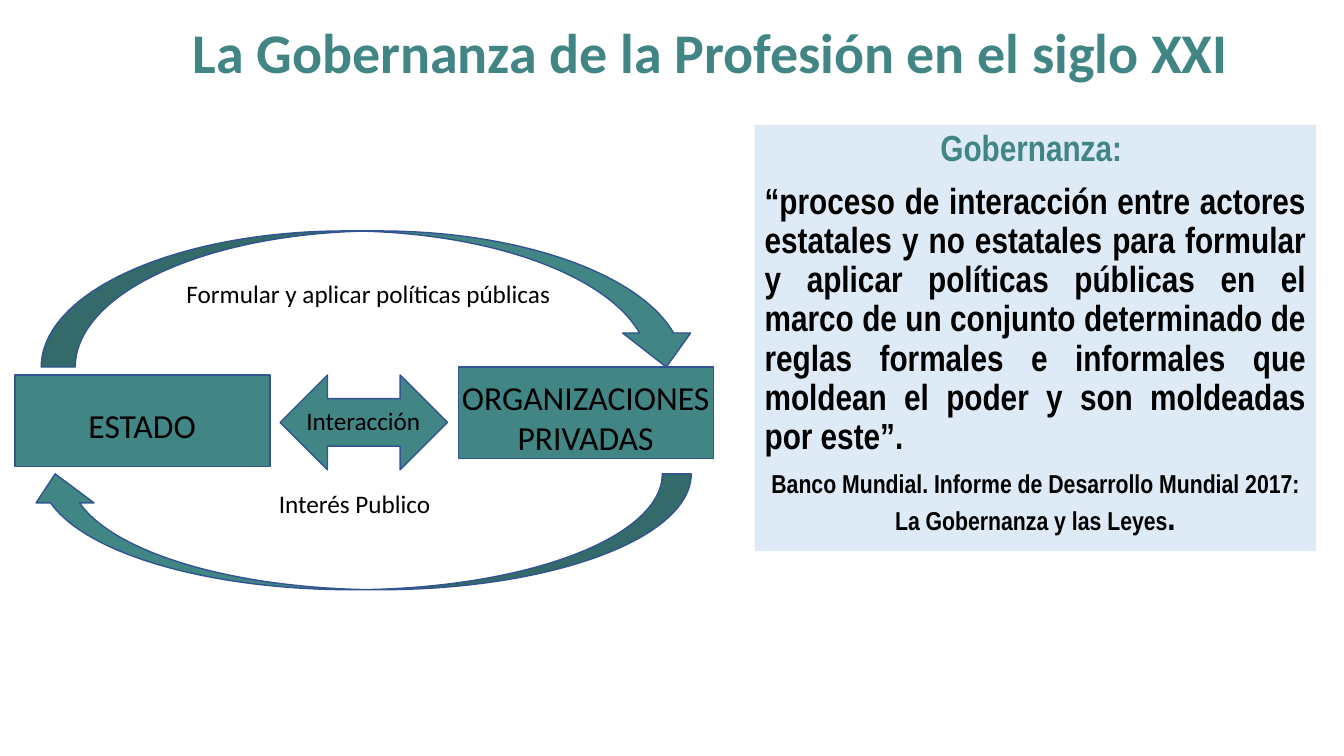
from pptx import Presentation
from pptx.dml.color import RGBColor
from pptx.enum.shapes import MSO_SHAPE as SHAPE
from pptx.enum.text import MSO_ANCHOR as ANCHOR, PP_ALIGN as ALIGN
from pptx.util import Cm, Pt

TEAL = RGBColor(0x41, 0x85, 0x84)
OUTLINE = RGBColor(0x32, 0x54, 0x91)
PALE_BLUE = RGBColor(0xDE, 0xEB, 0xF7)
BLACK = RGBColor(0, 0, 0)


class SlideBuilder:
    font = "Calibri"
    quote_font = "Arial Narrow"

    def __init__(self, slide):
        self.s = slide

    def style(self, p, size, color=BLACK, bold=False, font=None, align=ALIGN.LEFT):
        p.alignment = align
        p.font.name = font or self.font
        p.font.size = Pt(size)
        p.font.bold = bold
        p.font.color.rgb = color

    def shape(self, kind, box, fill=TEAL, line=OUTLINE, rotation=0):
        sp = self.s.shapes.add_shape(kind, *map(Cm, box))
        sp.shadow.inherit = False
        sp.rotation = rotation
        sp.fill.solid()
        sp.fill.fore_color.rgb = fill
        if line is None:
            sp.line.fill.background()
        else:
            sp.line.color.rgb = line
            sp.line.width = Pt(1)
        return sp

    def label(self, text, box, size, wrap=True, anchor=ANCHOR.TOP, spacing=1.0, **style):
        tf = self.s.shapes.add_textbox(*map(Cm, box)).text_frame
        tf.word_wrap = wrap
        tf.vertical_anchor = anchor
        p = tf.paragraphs[0]
        p.text = text
        p.line_spacing = spacing
        self.style(p, size, **style)

    def panel(self, box, paragraphs):
        """Filled quote panel; each paragraph is (runs, colour, alignment), each run (text, size)."""
        tf = self.shape(SHAPE.RECTANGLE, box, PALE_BLUE, None).text_frame
        tf.word_wrap = True
        tf.vertical_anchor = ANCHOR.TOP
        for i, (runs, color, align) in enumerate(paragraphs):
            p = tf.add_paragraph() if i else tf.paragraphs[0]
            p.line_spacing = 0.9
            p.space_before = Pt(10 if i else 0)
            self.style(p, runs[0][1], color, True, self.quote_font, align)
            for text, size in runs:
                r = p.add_run()
                r.text = text
                if size != runs[0][1]:
                    r.font.size = Pt(size)


def main():
    prs = Presentation()
    prs.slide_width, prs.slide_height = Cm(33.87), Cm(19.05)
    b = SlideBuilder(prs.slides.add_slide(prs.slide_layouts[6]))

    b.label("La Gobernanza de la Profesión en el siglo XXI", (3.53, 0.61, 28.75, 1.68), 40,
            anchor=ANCHOR.BOTTOM, spacing=0.9, color=TEAL, bold=True, align=ALIGN.CENTER)

    b.panel((19.02, 3.15, 14.15, 10.74), [
        ([("Gobernanza: ", 25.9)], TEAL, ALIGN.CENTER),
        ([("“proceso de interacción entre actores estatales y no estatales para formular y "
           "aplicar políticas públicas en el marco de un conjunto determinado de reglas "
           "formales e informales que moldean el poder y son moldeadas por este”.", 25.9)],
         BLACK, ALIGN.JUSTIFY),
        ([("Banco Mundial. Informe de Desarrollo Mundial 2017: La Gobernanza y las Leyes", 18.5),
          (".", 25.9)], BLACK, ALIGN.CENTER),
    ])

    b.shape(SHAPE.RECTANGLE, (0.38, 9.45, 6.43, 2.31))
    b.label("ESTADO", (1.98, 10.08, 3.66, 1.27), 24)
    b.shape(SHAPE.RECTANGLE, (11.56, 9.25, 6.43, 2.31))
    b.label("ORGANIZACIONES PRIVADAS", (11.28, 9.37, 6.96, 2.31), 24, align=ALIGN.CENTER)

    b.shape(SHAPE.CURVED_DOWN_ARROW, (1.04, 5.82, 16.61, 3.43))
    b.shape(SHAPE.CURVED_DOWN_ARROW, (0.66, 11.94, 16.76, 2.92), rotation=180)
    b.label("Formular y aplicar políticas públicas", (4.45, 6.88, 9.78, 1.02), 18, wrap=False)
    b.label("Interés Publico", (6.78, 12.17, 4.5, 1.02), 18)

    b.shape(SHAPE.LEFT_RIGHT_ARROW, (7.06, 9.45, 4.22, 2.39))
    b.label("Interacción", (7.47, 10.08, 3.48, 1.02), 18)

    prs.save("out.pptx")


if __name__ == "__main__":
    main()
